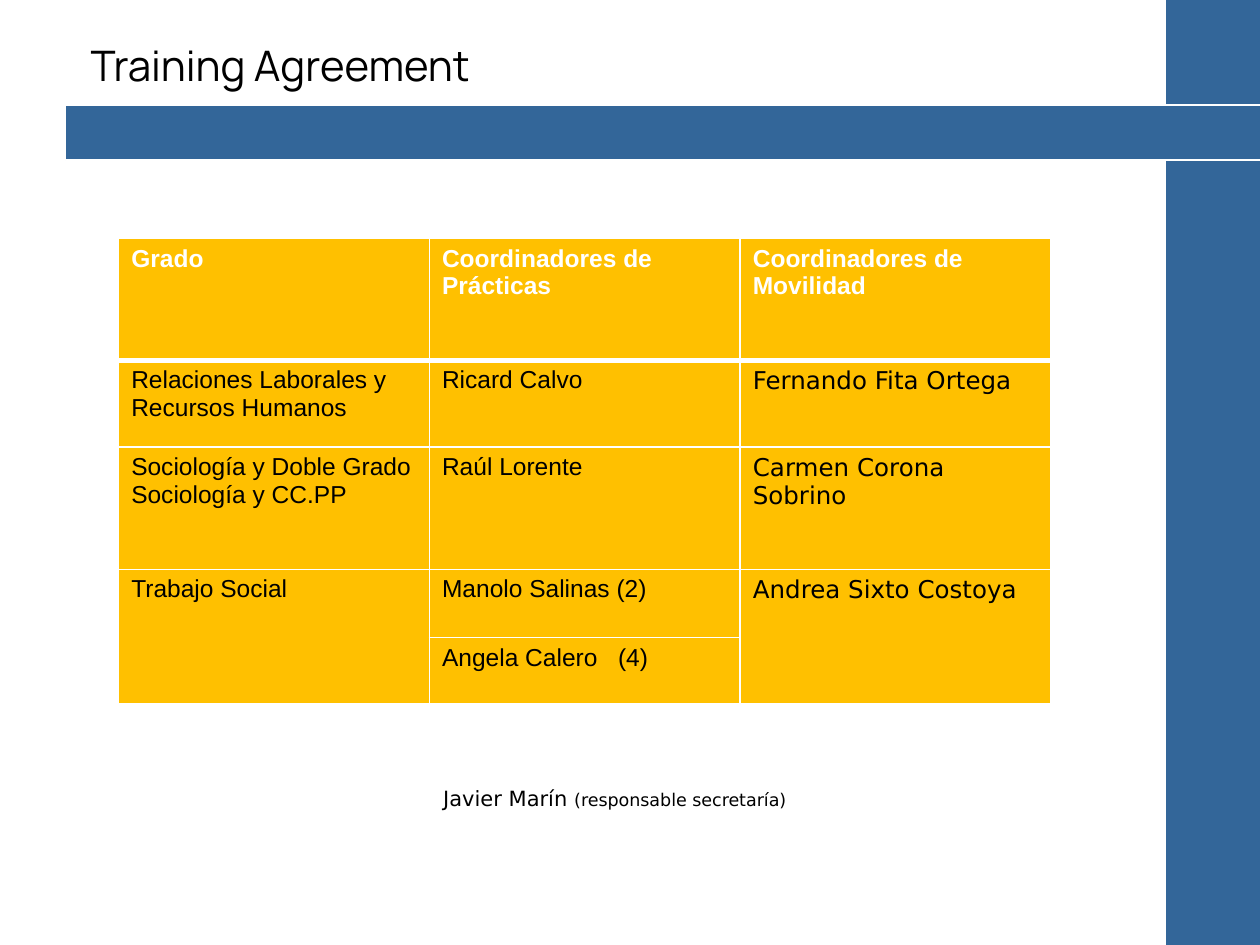
import pptx
import pptx.util
import pptx.dml.color
import pptx.enum.shapes
import pptx.enum.text
import pptx.oxml
import pptx.oxml.ns

Pt = pptx.util.Pt
COLORS = {"blue": "336699", "amber": "FFC000", "white": "FFFFFF", "black": "000000"}
TITLE = "Training Agreement"
CONTACT = [("Javier Marín ", 12), ("(responsable secretaría)", 10)]
ROWS = [
    ("Grado", "Coordinadores de Prácticas", "Coordinadores de Movilidad"),
    ("Relaciones Laborales y Recursos Humanos", "Ricard Calvo", "Fernando Fita Ortega"),
    ("Sociología y Doble Grado Sociología y CC.PP", "Raúl Lorente", "Carmen Corona Sobrino"),
    ("Trabajo Social", "Manolo Salinas (2)", "Andrea Sixto Costoya"),
    ("", "Angela Calero\t(4)", ""),
]
ROW_HEIGHTS = [69.5, 49.5, 70, 39, 38]
COLUMN_WIDTH = 177.6
MERGED_COLUMNS = (0, 2)
BARS = [(666.4, 0, 54, 540, False), (37.6, 60, 712.8, 31.5, True)]
TAB_POSITION = 100.6


def rgb(name):
    return pptx.dml.color.RGBColor.from_string(COLORS[name])


def add_run(paragraph, text, font, size, color="black", bold=False):
    run = paragraph.add_run()
    run.text = text
    run.font.name = font
    run.font.size = Pt(size)
    run.font.bold = bold
    run.font.color.rgb = rgb(color)


def add_bar(slide, left, top, width, height, outlined):
    shape = slide.shapes.add_shape(
        pptx.enum.shapes.MSO_SHAPE.RECTANGLE, Pt(left), Pt(top), Pt(width), Pt(height))
    shape.shadow.inherit = False
    shape.fill.solid()
    shape.fill.fore_color.rgb = rgb("blue")
    if outlined:
        shape.line.color.rgb = rgb("white")
        shape.line.width = Pt(0.75)
    else:
        shape.line.fill.background()


def set_borders(cell, top, bottom):
    properties = cell._tc.get_or_add_tcPr()
    for side, width in (("L", 1), ("R", 1), ("T", top), ("B", bottom)):
        properties.append(pptx.oxml.parse_xml(
            f'<a:ln{side} {pptx.oxml.ns.nsdecls("a")} w="{Pt(width)}"><a:solidFill>'
            f'<a:srgbClr val="{COLORS["white"]}"/></a:solidFill></a:ln{side}>'))


def add_tab_stop(paragraph):
    paragraph._p.get_or_add_pPr().append(pptx.oxml.parse_xml(
        f'<a:tabLst {pptx.oxml.ns.nsdecls("a")}>'
        f'<a:tab pos="{Pt(TAB_POSITION)}" algn="l"/></a:tabLst>'))


def fill_cell(cell, row, column, text):
    set_borders(cell, 3 if row == 1 else 1, 3 if row == 0 else 1)
    cell.fill.solid()
    cell.fill.fore_color.rgb = rgb("amber")
    cell.margin_left = cell.margin_right = Pt(7.2)
    cell.margin_top = cell.margin_bottom = Pt(3.6)
    paragraph = cell.text_frame.paragraphs[0]
    if "\t" in text:
        add_tab_stop(paragraph)
    header = row == 0
    font = "DejaVu Sans" if column == 2 and not header else "Arial"
    if text:
        add_run(paragraph, text, font, 14, "white" if header else "black", header)


def add_coordinators(slide):
    columns = len(ROWS[0])
    table = slide.shapes.add_table(
        len(ROWS), columns, Pt(67.8), Pt(136.4),
        Pt(COLUMN_WIDTH * columns), Pt(sum(ROW_HEIGHTS))).table
    for column in table.columns:
        column.width = Pt(COLUMN_WIDTH)
    for row, height in zip(table.rows, ROW_HEIGHTS):
        row.height = Pt(height)
    for row, texts in enumerate(ROWS):
        for column, text in enumerate(texts):
            fill_cell(table.cell(row, column), row, column, text)
    for column in MERGED_COLUMNS:
        table.cell(3, column).merge(table.cell(4, column))


def add_title(slide):
    title = slide.shapes.title
    title.left, title.top, title.width, title.height = Pt(44.6), Pt(-7.9), Pt(612), Pt(90)
    frame = title.text_frame
    frame.vertical_anchor = pptx.enum.text.MSO_ANCHOR.MIDDLE
    paragraph = frame.paragraphs[0]
    paragraph.alignment = pptx.enum.text.PP_ALIGN.LEFT
    add_run(paragraph, TITLE, "Manrope", 24)


def add_contact(slide):
    frame = slide.shapes.add_textbox(Pt(44.6), Pt(441.4), Pt(613.4), Pt(94.3)).text_frame
    frame.word_wrap = True
    frame.margin_left = frame.margin_right = frame.margin_top = frame.margin_bottom = Pt(7.2)
    paragraph = frame.paragraphs[0]
    paragraph.alignment = pptx.enum.text.PP_ALIGN.CENTER
    for text, size in CONTACT:
        add_run(paragraph, text, "DejaVu Sans", size)


def main():
    presentation = pptx.Presentation()
    presentation.slide_width, presentation.slide_height = Pt(720), Pt(540)
    slide = presentation.slides.add_slide(presentation.slide_layouts[5])
    for bar in BARS:
        add_bar(slide, *bar)
    add_title(slide)
    add_contact(slide)
    add_coordinators(slide)
    presentation.save("out.pptx")


if __name__ == "__main__":
    main()
